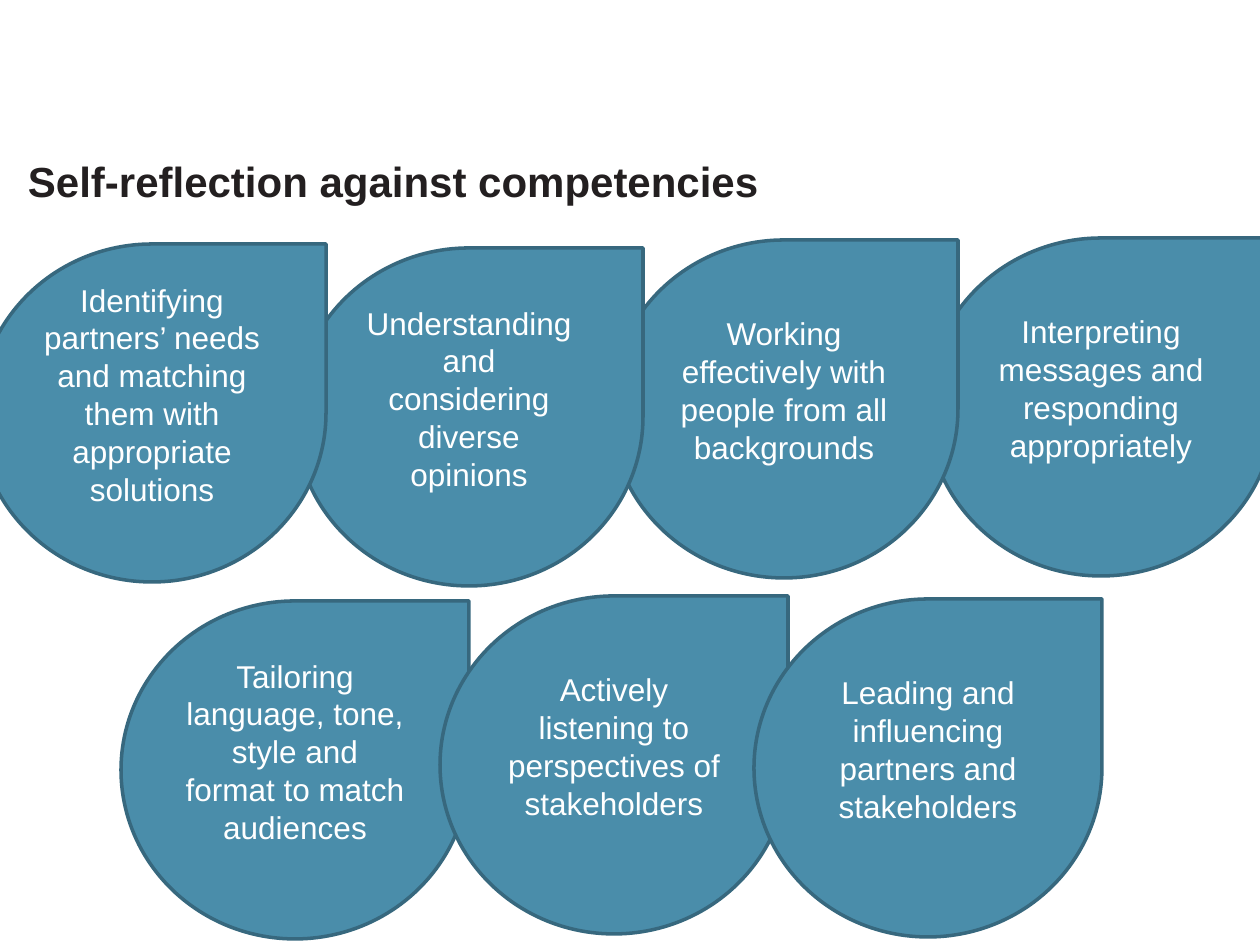
from pptx import Presentation
from pptx.dml.color import RGBColor
from pptx.enum.shapes import MSO_SHAPE as Shape
from pptx.enum.text import MSO_ANCHOR as Anchor, PP_ALIGN as Align
from pptx.util import Emu, Pt

SCALE = 914400 // 126
BLUE = RGBColor(0x4A, 0x8D, 0xAA)
EDGE = RGBColor(0x37, 0x68, 0x7E)
WHITE = RGBColor(0xFF, 0xFF, 0xFF)
INK = RGBColor(0x23, 0x1F, 0x20)
WIDTH, HEIGHT = 348, 338

DROPS = [
    (121, 601, "Tailoring language, tone, style and format to match audiences"),
    (927, 238, "Interpreting messages and responding appropriately"),
    (610, 240, "Working effectively with people from all backgrounds"),
    (295, 248, "Understanding and considering diverse opinions"),
    (-22, 244, "Identifying partners’ needs and matching them with appropriate solutions"),
    (440, 596, "Actively listening to perspectives of stakeholders"),
    (754, 599, "Leading and influencing partners and stakeholders"),
]


def px(count):
    return Emu(count * SCALE)


def style(para, size, color, bold=False):
    font = para.font
    font.name = "Arial"
    font.size = Pt(size)
    font.bold = bold
    font.color.rgb = color


def add_title(slide, text):
    box = slide.shapes.add_textbox(px(15), px(135), px(1040), px(84))
    frame = box.text_frame
    frame.word_wrap = True
    frame.vertical_anchor = Anchor.BOTTOM
    frame.margin_left = frame.margin_right = px(13)
    frame.margin_top = frame.margin_bottom = px(13)
    frame.text = text
    para = frame.paragraphs[0]
    para.line_spacing = 0.85
    style(para, 24, INK, True)


def add_drop(slide, left, top, text):
    drop = slide.shapes.add_shape(
        Shape.TEAR, px(left), px(top), px(WIDTH), px(HEIGHT))
    drop.shadow.inherit = False
    drop.fill.solid()
    drop.fill.fore_color.rgb = BLUE
    drop.line.color.rgb = EDGE
    drop.line.width = Pt(2)
    frame = drop.text_frame
    frame.word_wrap = True
    frame.vertical_anchor = Anchor.MIDDLE
    frame.margin_bottom = px(44)
    frame.text = text
    para = frame.paragraphs[0]
    para.alignment = Align.CENTER
    para.line_spacing = Pt(21.6)
    style(para, 18, WHITE)


def main():
    deck = Presentation()
    deck.slide_width, deck.slide_height = px(1260), px(945)
    slide = deck.slides.add_slide(deck.slide_layouts[6])
    add_title(slide, "Self-reflection against competencies")
    for left, top, text in DROPS:
        add_drop(slide, left, top, text)
    deck.save("out.pptx")


if __name__ == "__main__":
    main()
